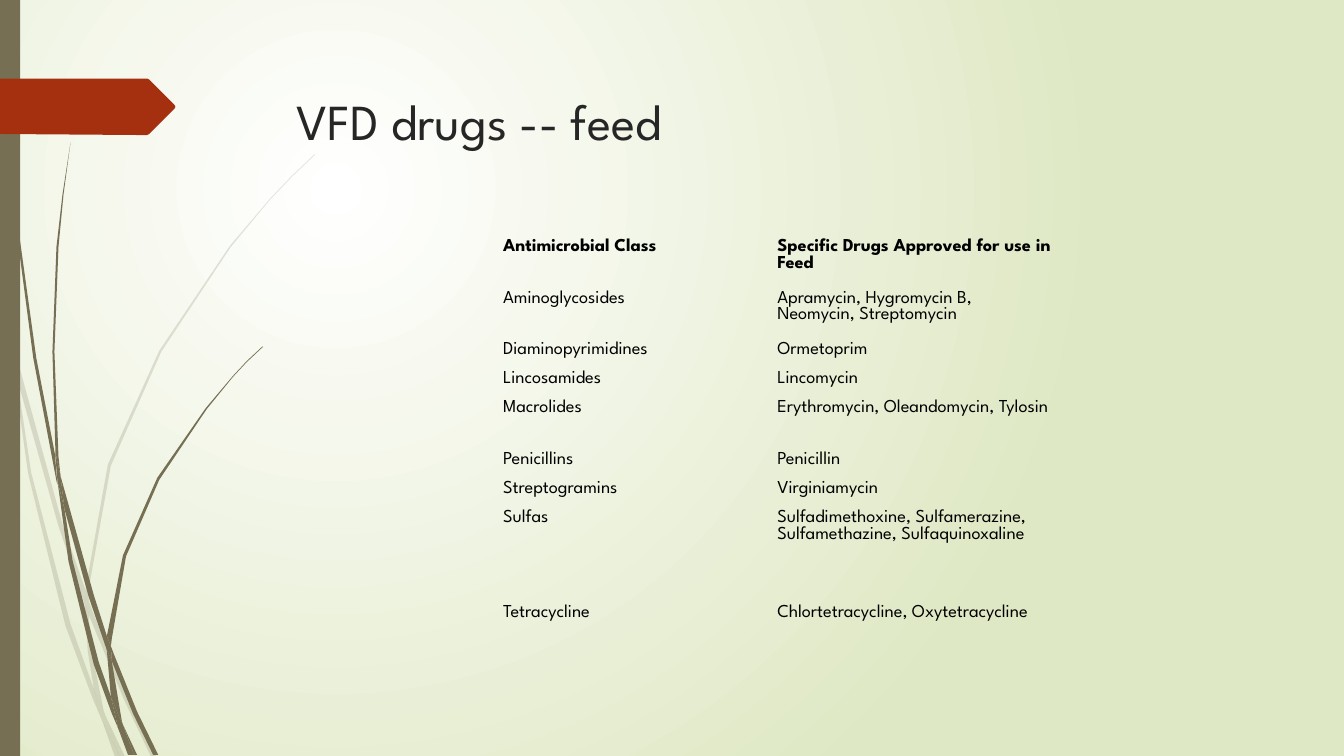
from lxml import etree
from pptx import Presentation
from pptx.dml.color import RGBColor
from pptx.enum.shapes import MSO_SHAPE
from pptx.enum.text import MSO_ANCHOR, MSO_AUTO_SIZE, PP_ALIGN
from pptx.oxml.ns import qn
from pptx.util import Pt

PX = 9144
RECTANGLE = MSO_SHAPE.RECTANGLE
TOP = MSO_ANCHOR.TOP
LEFT = PP_ALIGN.LEFT
NO_AUTOFIT = MSO_AUTO_SIZE.NONE
FONT = "League Spartan"
OLIVE = "766F54"
RUST = "A53010"
PLAIN_STYLE = "{2D5ABB26-0587-4C30-8999-92F81FD0307C}"

PALE_GRASS = [
    [(11, 350), (9, 322), (0, 282), (0, 299), (10, 344)],
    [(58, 522), (84, 599), (85, 586), (62, 520), (14, 345), (17, 376)],
    [(92, 607), (88, 596), (88, 610), (123, 694), (150, 751), (155, 751), (127, 692)],
    [(119, 751), (124, 751), (105, 711)],
    [(93, 683), (70, 619), (31, 469), (17, 376), (11, 350), (28, 470), (65, 621),
     (92, 693), (101, 714), (99, 707)],
    [(84, 599), (87, 646), (93, 683), (96, 692), (105, 711), (103, 706), (91, 646),
     (88, 610), (88, 608)],
    [(88, 584), (110, 462), (160, 349), (229, 245), (268, 198), (290, 175), (312, 154),
     (312, 153), (289, 175), (268, 197), (228, 244), (158, 348), (107, 461), (85, 584),
     (85, 586), (88, 596)],
    [(101, 714), (114, 751), (119, 751)],
    [(88, 608), (88, 610), (88, 596), (85, 586), (84, 599)],
    [(96, 692), (93, 683), (99, 707), (101, 714), (119, 751), (105, 711)],
]

DARK_GRASS = [
    [(7, 110), (17, 233), (33, 355), (56, 477), (57, 481), (55, 457), (55, 453),
     (36, 355), (19, 232), (8, 109), (5, 48), (4, 0), (3, 0), (4, 48)],
    [(88, 592), (106, 645), (106, 633), (106, 631), (93, 590), (60, 472), (64, 505)],
    [(113, 649), (110, 641), (111, 656), (132, 708), (152, 749), (157, 749), (136, 706)],
    [(110, 691), (98, 657), (72, 556), (64, 505), (57, 477), (68, 557), (93, 659),
     (111, 708), (117, 722), (116, 717)],
    [(60, 472), (58, 453), (54, 349), (58, 245), (63, 193), (70, 141), (62, 193),
     (56, 245), (52, 349), (55, 449)],
    [(133, 749), (136, 749), (122, 719)],
    [(57, 477), (64, 505), (60, 472), (55, 449), (55, 453)],
    [(111, 633), (125, 552), (158, 476), (205, 406), (231, 374), (245, 359), (261, 344),
     (260, 344), (245, 358), (231, 373), (204, 405), (156, 474), (122, 551), (106, 631),
     (110, 641)],
    [(117, 722), (127, 749), (131, 749)],
    [(106, 645), (110, 691), (116, 706), (122, 719), (121, 716), (111, 656), (109, 651)],
    [(106, 645), (109, 651), (111, 656), (110, 641), (106, 631), (106, 633)],
    [(116, 706), (110, 691), (116, 717), (117, 722), (130, 749), (133, 749), (122, 719)],
]

TITLE_ARROW = [(173, 108), (148, 133), (146, 134), (136, 134), (0, 133), (0, 78),
               (146, 78), (148, 79), (173, 104), (174, 106)]

COLUMN_WIDTHS = [272, 285]
ROW_HEIGHTS = [51, 51, 29, 29, 51, 29, 29, 94, 51]
DRUG_ROWS = [
    ("Antimicrobial Class", "Specific Drugs Approved for use in Feed"),
    ("Aminoglycosides", "Apramycin, Hygromycin B, Neomycin, Streptomycin"),
    ("Diaminopyrimidines", "Ormetoprim"),
    ("Lincosamides", "Lincomycin"),
    ("Macrolides", "Erythromycin, Oleandomycin, Tylosin"),
    ("Penicillins", "Penicillin"),
    ("Streptogramins", "Virginiamycin"),
    ("Sulfas", "Sulfadimethoxine, Sulfamerazine, Sulfamethazine, Sulfaquinoxaline"),
    ("Tetracycline", "Chlortetracycline, Oxytetracycline"),
]


def px(length):
    return length * PX


def rgb(color):
    return RGBColor.from_string(color)


def paint(shape, color, alpha=None):
    shape.shadow.inherit = False
    shape.line.fill.background()
    shape.fill.solid()
    shape.fill.fore_color.rgb = rgb(color)
    if alpha is not None:
        tint = shape.fill._xPr.find(qn("a:solidFill"))[0]
        etree.SubElement(tint, qn("a:alpha"), val=str(alpha * 1000))


def add_outline(shapes, points, color, alpha=None):
    builder = shapes.build_freeform(*points[0], scale=PX)
    builder.add_line_segments(points[1:], close=True)
    paint(builder.convert_to_shape(), color, alpha)


def add_grass(page, blades, alpha=None):
    group = page.shapes.add_group_shape()
    for blade in blades:
        add_outline(group.shapes, blade, OLIVE, alpha)


def add_side_bar(page):
    bar = page.shapes.add_shape(RECTANGLE, 0, 0, px(20), px(750))
    paint(bar, OLIVE)


def set_background(page, center, edge):
    fill = page.background.fill
    fill.gradient()
    for stop, color in zip(fill.gradient_stops, (center, edge)):
        stop.color.rgb = rgb(color)
    linear = page._element.find(".//" + qn("a:lin"))
    radial = etree.Element(qn("a:path"), {"path": "circle"})
    etree.SubElement(radial, qn("a:fillToRect"), l="50000", t="50000", r="100000", b="100000")
    linear.getparent().replace(linear, radial)


def style_text(para, size, color, bold=False):
    para.alignment = LEFT
    para.font.name = FONT
    para.font.size = Pt(size)
    para.font.bold = bold
    para.font.color.rgb = rgb(color)


def set_title(page, text):
    title = page.shapes.title
    title.left, title.top, title.width, title.height = map(px, (284, 68, 975, 140))
    frame = title.text_frame
    frame.text = text
    frame.auto_size = NO_AUTOFIT
    frame.vertical_anchor = TOP
    frame.margin_top = px(21)
    style_text(frame.paragraphs[0], 36, "262626")


def add_drug_table(page):
    holder = page.shapes.add_table(
        len(DRUG_ROWS), len(COLUMN_WIDTHS), px(492), px(233),
        px(sum(COLUMN_WIDTHS)), px(sum(ROW_HEIGHTS)))
    table = holder.table
    table.horz_banding = False
    table._tbl.tblPr.find(qn("a:tableStyleId")).text = PLAIN_STYLE
    for column, width in zip(table.columns, COLUMN_WIDTHS):
        column.width = px(width)
    for index, texts in enumerate(DRUG_ROWS):
        table.rows[index].height = px(ROW_HEIGHTS[index])
        for cell, text in zip(table.rows[index].cells, texts):
            cell.fill.background()
            cell.margin_left = cell.margin_right = px(7)
            cell.margin_top = cell.margin_bottom = px(4)
            cell.text = text
            style_text(cell.text_frame.paragraphs[0], 13, "000000", bold=index == 0)


def main():
    deck = Presentation()
    deck.slide_width, deck.slide_height = px(1333), px(750)
    page = deck.slides.add_slide(deck.slide_layouts[5])
    set_background(page, "FFFFFF", "DFE8C4")
    add_grass(page, PALE_GRASS, alpha=20)
    add_grass(page, DARK_GRASS)
    add_side_bar(page)
    add_outline(page.shapes, TITLE_ARROW, RUST)
    set_title(page, "VFD drugs -- feed")
    add_drug_table(page)
    deck.save("out.pptx")


if __name__ == "__main__":
    main()
